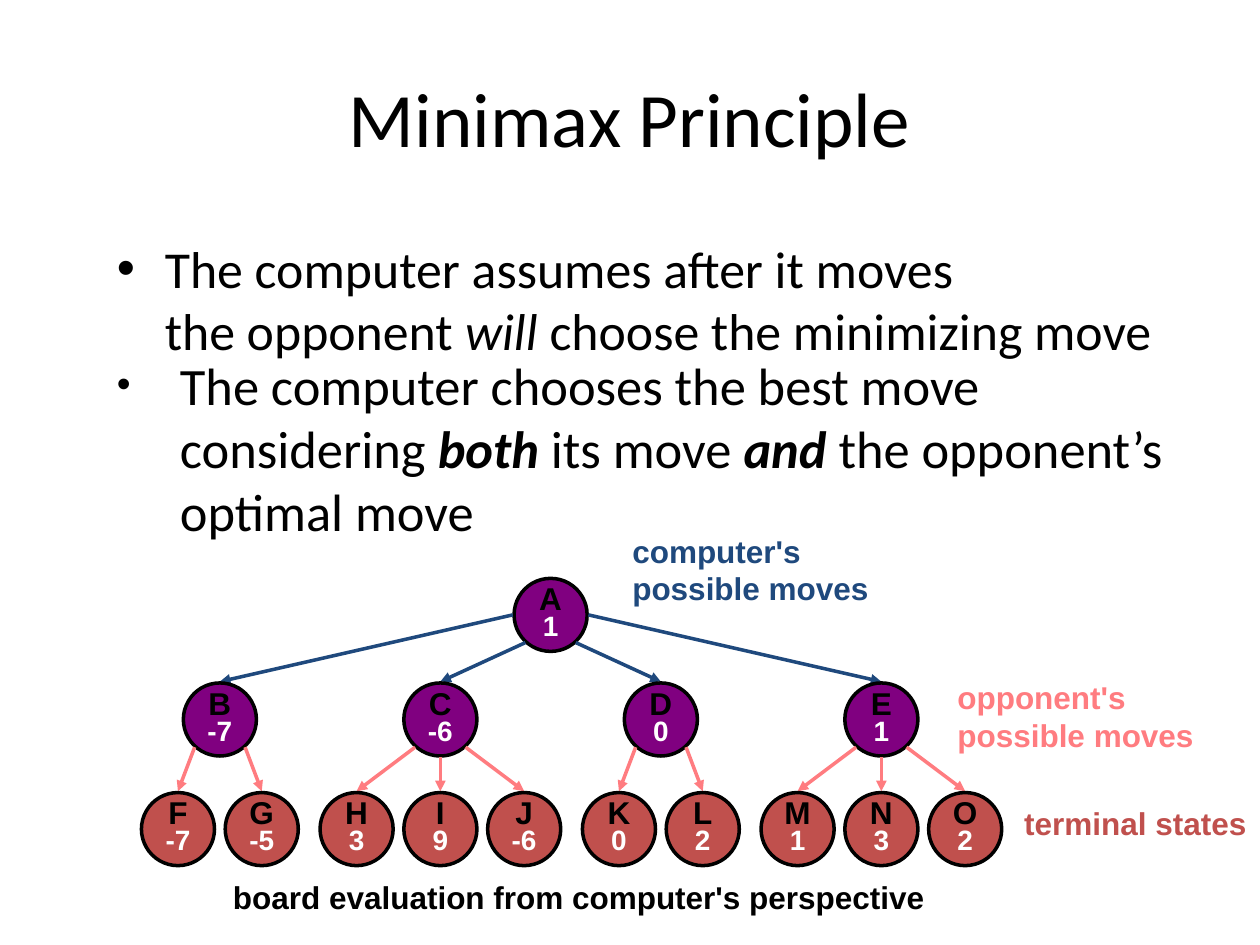
from dataclasses import dataclass

import lxml.etree
import pptx
import pptx.dml.color
import pptx.enum.shapes
import pptx.enum.text
import pptx.oxml.ns
import pptx.util

Inches = pptx.util.Inches
Pt = pptx.util.Pt
RGBColor = pptx.dml.color.RGBColor
qn = pptx.oxml.ns.qn

BLACK = RGBColor(0x00, 0x00, 0x00)
WHITE = RGBColor(0xFF, 0xFF, 0xFF)
NAVY = RGBColor(0x1F, 0x49, 0x7D)
PURPLE = RGBColor(0x80, 0x00, 0x80)
PINK = RGBColor(0xFF, 0x7C, 0x80)
RED = RGBColor(0xC0, 0x50, 0x4D)

DIAMETER = 0.58
ARROW_GAP = 0.3  # from a node's centre to an arrow end
CHILD_PITCH = 1.75
LEAF_PITCH = 0.665
ROOT_X, ROOT_Y, CHILD_Y, LEAF_Y = 4.37, 4.88, 5.71, 6.58

# Arrow starts, as offsets from the parent's centre
LEFT, RIGHT, BOTTOM = (-ARROW_GAP, 0), (ARROW_GAP, 0), (0, ARROW_GAP)
LOWER_LEFT, LOWER_RIGHT = (-0.2, 0.22), (0.2, 0.22)
ROOT_PORTS = [LEFT, LOWER_LEFT, LOWER_RIGHT, RIGHT]
CHILD_PORTS = {2: [LOWER_LEFT, LOWER_RIGHT], 3: [LOWER_LEFT, BOTTOM, LOWER_RIGHT]}


@dataclass
class Node:
    name: str
    value: str
    children: tuple = ()


@dataclass
class Label:
    text: str
    left: float
    top: float
    width: float
    height: float
    color: RGBColor


@dataclass
class Bullet:
    top: float
    height: float
    size: float
    indent: float
    marker_percent: int
    runs: list  # (text, bold, italic)


TREE = Node("A", "1", (
    Node("B", "-7", (Node("F", "-7"), Node("G", "-5"))),
    Node("C", "-6", (Node("H", "3"), Node("I", "9"), Node("J", "-6"))),
    Node("D", "0", (Node("K", "0"), Node("L", "2"))),
    Node("E", "1", (Node("M", "1"), Node("N", "3"), Node("O", "2"))),
))

LABELS = [
    Label("computer's\npossible moves", 4.92, 4.17, 2.08, 0.7, NAVY),
    Label("opponent's\npossible moves", 7.5, 5.33, 2.08, 0.7, PINK),
    Label("board evaluation from computer's perspective", 1.75, 6.92, 5.69, 0.4, BLACK),
    Label("terminal states", 8.03, 6.33, 1.97, 0.4, RED),
]

BULLETS = [
    Bullet(1.83, 0.92, 29.6, 0.38, 100, [
        ("The computer assumes after it moves\nthe opponent ", False, False),
        ("will", False, True),
        (" choose the minimizing move", False, False),
    ]),
    Bullet(2.75, 1.5, 30, 0.5, 75, [
        ("The computer chooses the best move considering ", False, False),
        ("both", True, True),
        (" its move ", False, False),
        ("and", True, True),
        (" the opponent’s optimal move", False, False),
    ]),
]


def format_font(font, name: str, size: float, color: RGBColor,
                bold: bool = False, italic: bool = False) -> None:
    font.name = name
    font.size = Pt(size)
    font.color.rgb = color
    font.bold = bold
    font.italic = italic


def add_bullet(slide, bullet: Bullet) -> None:
    box = slide.shapes.add_textbox(Inches(0.83), Inches(bullet.top),
                                   Inches(8.83), Inches(bullet.height))
    box.text_frame.word_wrap = True
    paragraph = box.text_frame.paragraphs[0]
    for text, bold, italic in bullet.runs:
        for index, line in enumerate(text.split("\n")):
            if index:
                paragraph.add_line_break()
            run = paragraph.add_run()
            run.text = line
            format_font(run.font, "Calibri", bullet.size, BLACK, bold, italic)

    # Hanging indent, relative spacing and marker
    properties = paragraph._p.get_or_add_pPr()
    properties.set("marL", str(Inches(bullet.indent)))
    properties.set("indent", str(-Inches(bullet.indent)))
    spacing = lxml.etree.SubElement(properties, qn("a:spcBef"))
    lxml.etree.SubElement(spacing, qn("a:spcPct"), val="20000")
    lxml.etree.SubElement(properties, qn("a:buSzPct"), val=str(bullet.marker_percent * 1000))
    lxml.etree.SubElement(properties, qn("a:buFont"), typeface="Arial")
    lxml.etree.SubElement(properties, qn("a:buChar"), char="•")


def add_arrow(slide, start: tuple, end: tuple, color: RGBColor) -> None:
    arrow = slide.shapes.add_connector(
        pptx.enum.shapes.MSO_CONNECTOR.STRAIGHT, *map(Inches, start + end))
    arrow.line.color.rgb = color
    arrow.line.width = Pt(2)
    lxml.etree.SubElement(arrow.line._get_or_add_ln(), qn("a:tailEnd"), type="triangle")
    lxml.etree.SubElement(arrow._element.spPr, qn("a:effectLst"))


def add_node(slide, node: Node, x: float, y: float, fill: RGBColor) -> None:
    circle = slide.shapes.add_shape(
        pptx.enum.shapes.MSO_SHAPE.OVAL, Inches(x - DIAMETER / 2),
        Inches(y - DIAMETER / 2), Inches(DIAMETER), Inches(DIAMETER))
    circle.shadow.inherit = False
    circle.fill.solid()
    circle.fill.fore_color.rgb = fill
    circle.line.color.rgb = BLACK
    circle.line.width = Pt(2)
    frame = circle.text_frame
    frame.word_wrap = False
    frame.vertical_anchor = pptx.enum.text.MSO_ANCHOR.MIDDLE
    frame.text = f"{node.name}\n{node.value}"
    for paragraph, size, color in zip(frame.paragraphs, (18, 16), (BLACK, WHITE)):
        paragraph.alignment = pptx.enum.text.PP_ALIGN.CENTER
        paragraph.line_spacing = 0.75
        format_font(paragraph.runs[0].font, "Arial", size, color, bold=True)


def add_children(slide, parent: Node, x: float, y: float, child_y: float, pitch: float,
                 ports: list, arrow_color: RGBColor, fill: RGBColor) -> list:
    """Draw the children centred under their parent and return their x positions."""
    first_x = x - pitch * (len(parent.children) - 1) / 2
    positions = [first_x + pitch * index for index in range(len(parent.children))]
    for child, child_x, (dx, dy) in zip(parent.children, positions, ports):
        add_arrow(slide, (x + dx, y + dy), (child_x, child_y - ARROW_GAP), arrow_color)
        add_node(slide, child, child_x, child_y, fill)
    return positions


def add_label(slide, label: Label) -> None:
    box = slide.shapes.add_textbox(Inches(label.left), Inches(label.top),
                                   Inches(label.width), Inches(label.height))
    box.text_frame.word_wrap = False
    box.text_frame.auto_size = pptx.enum.text.MSO_AUTO_SIZE.SHAPE_TO_FIT_TEXT
    paragraph = box.text_frame.paragraphs[0]
    paragraph.text = label.text
    for run in paragraph.runs:
        format_font(run.font, "Arial", 18, label.color, bold=True)


def main() -> None:
    presentation = pptx.Presentation()
    presentation.slide_width = Inches(10)
    presentation.slide_height = Inches(7.5)
    slide = presentation.slides.add_slide(presentation.slide_layouts[5])

    # Title
    title = slide.shapes.title
    title.left, title.top = Inches(0.5), Inches(0.3)
    title.width, title.height = Inches(9), Inches(1.25)
    title.text_frame.text = "Minimax Principle"
    format_font(title.text_frame.paragraphs[0].runs[0].font, "Calibri", 44, BLACK)

    # Principle
    for bullet in BULLETS:
        add_bullet(slide, bullet)

    # Game tree: the second level is centred slightly off the root
    add_node(slide, TREE, ROOT_X, ROOT_Y, PURPLE)
    positions = add_children(slide, TREE, ROOT_X, ROOT_Y, CHILD_Y, CHILD_PITCH,
                             ROOT_PORTS, NAVY, PURPLE)
    for child, x in zip(TREE.children, positions):
        add_children(slide, child, x, CHILD_Y, LEAF_Y, LEAF_PITCH,
                     CHILD_PORTS[len(child.children)], PINK, RED)

    # Level labels and caption
    for label in LABELS:
        add_label(slide, label)

    presentation.save("out.pptx")


if __name__ == "__main__":
    main()
